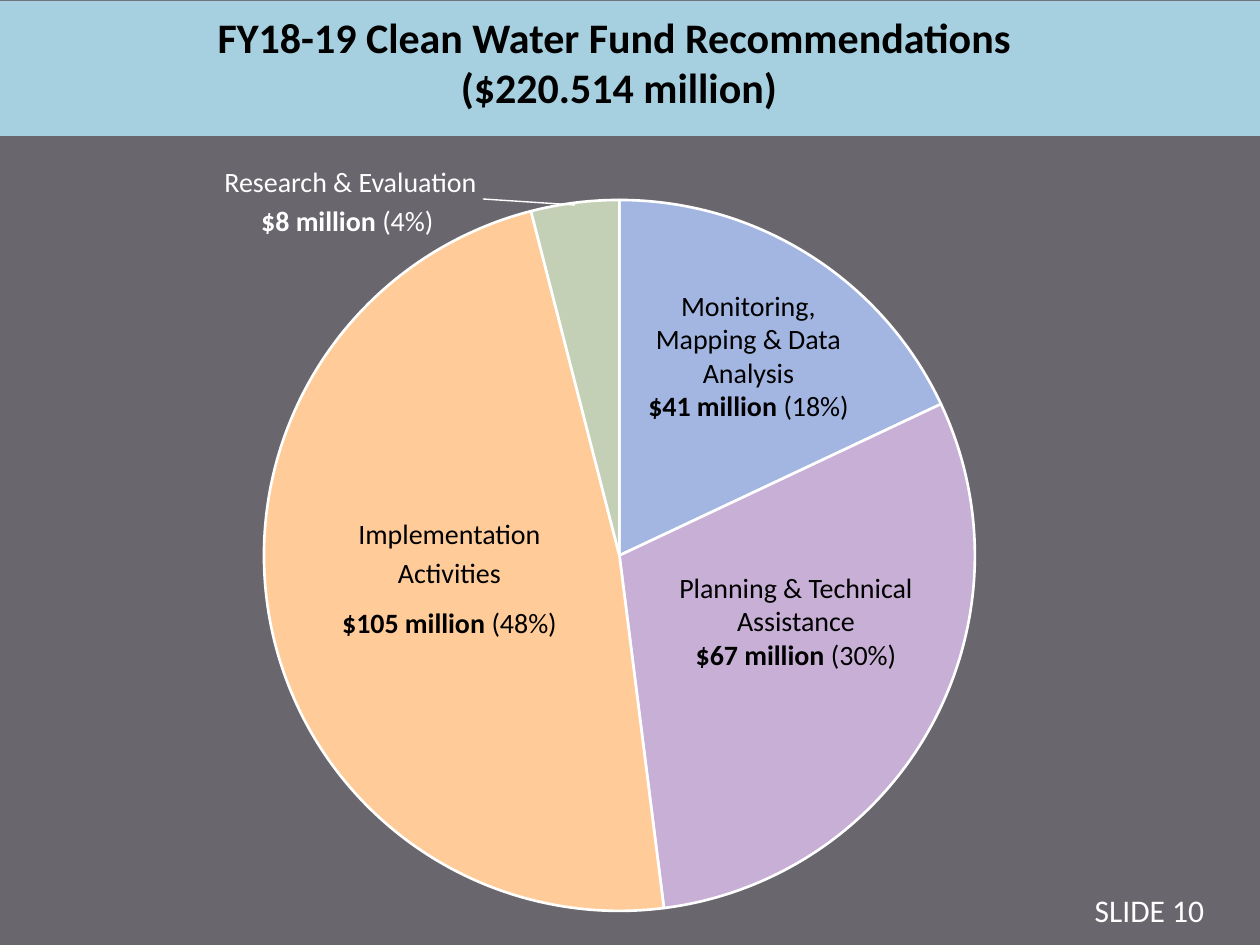
import pptx
import pptx.chart.data
import pptx.dml.color
import pptx.enum.chart
import pptx.enum.shapes
import pptx.enum.text
import pptx.oxml
import pptx.util
from pptx.oxml.ns import nsdecls, qn

PX = 914400 // 126
FONT = "Calibri"
WHITE, BLACK = "FFFFFF", "000000"
SLICES = [(18, "A3B6E2"), (30, "C8AFD6"), (48, "FFCC99"), (4, "C4D0B5")]

# box, name, amount, share, colour, line spacing, space after
LABELS = [
    ((324, 504, 251, 215), "Implementation Activities", "$105 million ", "(48%)", BLACK, 1.18, 6),
    ((168, 152, 365, 169), "Research & Evaluation", "$8 million ", "(4%) ", WHITE, 1.18, 0),
    ((620, 282, 257, 117), "Monitoring, Mapping & Data Analysis", "$41 million ", "(18%)", BLACK, 1, 0),
    ((662, 564, 268, 184), "Planning & Technical Assistance", "$67 million ", "(30%)", BLACK, 1, 0),
]


def px(*values):
    return [v * PX for v in values]


def rgb(value):
    return pptx.dml.color.RGBColor.from_string(value)


def add_band(slide, box, color):
    sp = slide.shapes.add_shape(pptx.enum.shapes.MSO_SHAPE.RECTANGLE, *px(*box))
    sp.shadow.inherit = False
    sp.fill.solid()
    sp.fill.fore_color.rgb = rgb(color)
    sp.line.fill.background()


def add_text(slide, box, paragraphs, size, color, spacing=1, after=0):
    """Add centred paragraphs, each a list of (text, bold) runs."""
    tf = slide.shapes.add_textbox(*px(*box)).text_frame
    tf.word_wrap = True
    for i, runs in enumerate(paragraphs):
        p = tf.add_paragraph() if i else tf.paragraphs[0]
        p.alignment = pptx.enum.text.PP_ALIGN.CENTER
        p.line_spacing = float(spacing)
        p.space_after = pptx.util.Pt(after)
        for text, bold in runs:
            r = p.add_run()
            r.text = text
            r.font.name = FONT
            r.font.size = pptx.util.Pt(size)
            r.font.bold = bold
            r.font.color.rgb = rgb(color)


def add_pie(slide, box, plot):
    """Add the pie with its plot area fixed at the given place on the slide."""
    data = pptx.chart.data.CategoryChartData()
    data.categories = [str(i + 1) for i in range(len(SLICES))]
    data.add_series("Series 1", [value for value, _ in SLICES])
    chart = slide.shapes.add_chart(
        pptx.enum.chart.XL_CHART_TYPE.PIE, *px(*box), data).chart
    chart.has_legend = False
    chart.has_title = False
    chart.font.name = FONT
    chart.font.size = pptx.util.Pt(10)
    chart.font.color.rgb = rgb(WHITE)
    chart.plots[0].vary_by_categories = True
    for i, (_, color) in enumerate(SLICES):
        fmt = chart.plots[0].series[0].points[i].format
        fmt.fill.solid()
        fmt.fill.fore_color.rgb = rgb(color)
        fmt.line.color.rgb = rgb(WHITE)
        fmt.line.width = pptx.util.Pt(1.5)

    left, top, width, height = box
    x, y, w, h = plot
    shares = {"x": (x - left) / width, "y": (y - top) / height,
              "w": w / width, "h": h / height}
    parts = "".join(f'<c:{k} val="{v:.4f}"/>' for k, v in shares.items())
    layout = pptx.oxml.parse_xml(
        f'<c:layout {nsdecls("c")}><c:manualLayout><c:layoutTarget val="inner"/>'
        f'<c:xMode val="edge"/><c:yMode val="edge"/>{parts}</c:manualLayout></c:layout>')
    area = chart._chartSpace.chart.plotArea
    for old in area.findall(qn("c:layout")):
        area.remove(old)
    area.insert(0, layout)


def add_leader(slide, start, end):
    line = slide.shapes.add_connector(
        pptx.enum.shapes.MSO_CONNECTOR.STRAIGHT, *px(*start, *end))
    line.line.color.rgb = rgb(WHITE)
    line.line.width = pptx.util.Pt(0.79)
    line._element.spPr.append(pptx.oxml.parse_xml(f'<a:effectLst {nsdecls("a")}/>'))


def main():
    prs = pptx.Presentation()
    prs.slide_width, prs.slide_height = pptx.util.Inches(10), pptx.util.Inches(7.5)
    slide = prs.slides.add_slide(prs.slide_layouts[6])
    slide.background.fill.solid()
    slide.background.fill.fore_color.rgb = rgb("69676D")

    add_band(slide, (0, 1, 1260, 135), "A6D0DF")
    title = [[("FY18-19 Clean Water Fund Recommendations ", True)],
             [("($220.514 million)", True)]]
    add_text(slide, (10, 5, 1218, 115), title, 24, BLACK)
    add_text(slide, (1050, 885, 199, 50), [[("SLIDE 10", False)]], 18, WHITE)

    add_pie(slide, (-58, 183, 1355, 746), (264, 200, 711, 711))
    for box, name, amount, share, color, spacing, after in LABELS:
        paragraphs = [[(name, False)], [(amount, True), (share, False)]]
        add_text(slide, box, paragraphs, 16, color, spacing, after)
    add_leader(slide, (483, 199), (575, 205))

    prs.save("out.pptx")


if __name__ == "__main__":
    main()
